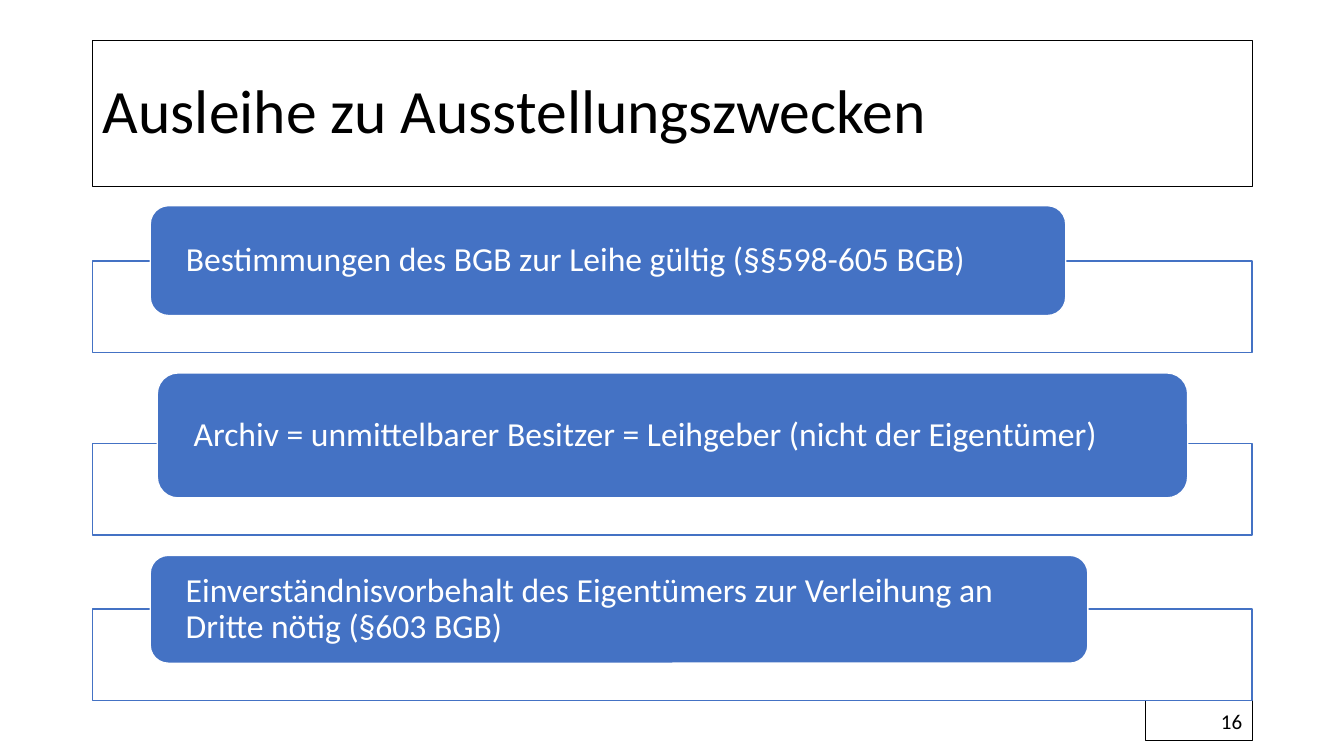
import pptx
import pptx.util
import pptx.dml.color
import pptx.enum.shapes
import pptx.enum.text
import pptx.oxml.ns
import lxml.etree

Inches = pptx.util.Inches
Shape = pptx.enum.shapes.MSO_SHAPE
Align = pptx.enum.text.PP_ALIGN
BLACK = pptx.dml.color.RGBColor(0x00, 0x00, 0x00)
WHITE = pptx.dml.color.RGBColor(0xFF, 0xFF, 0xFF)
BLUE = pptx.dml.color.RGBColor(0x44, 0x72, 0xC4)

LEFT, WIDTH = 0.92, 11.5
PANEL_HEIGHT, OVERLAP, GAP = 0.91, 0.54, 0.2
STATEMENTS = [
    ("Bestimmungen des BGB zur Leihe gültig (§§598-605 BGB)", 1.49, 9.08, 1.09),
    ("Archiv = unmittelbarer Besitzer = Leihgeber (nicht der Eigentümer)", 1.56, 10.22, 1.24),
    ("Einverständnisvorbehalt des Eigentümers zur Verleihung an Dritte nötig (§603 BGB)", 1.49, 9.3, 1.07),
]


def style_box(box, fill, line, line_width, opacity=100):
    box.shadow.inherit = False
    box.fill.solid()
    box.fill.fore_color.rgb = fill
    box.line.color.rgb = line
    box.line.width = pptx.util.Pt(line_width)
    if opacity < 100:
        color = box.fill._xPr.find(".//" + pptx.oxml.ns.qn("a:srgbClr"))
        alpha = lxml.etree.SubElement(color, pptx.oxml.ns.qn("a:alpha"))
        alpha.set("val", str(opacity * 1000))


def write_text(box, text, size, color, alignment, spacing=1.0):
    frame = box.text_frame
    frame.text = text
    frame.word_wrap = True
    frame.auto_size = pptx.enum.text.MSO_AUTO_SIZE.NONE
    frame.vertical_anchor = pptx.enum.text.MSO_ANCHOR.MIDDLE
    para = frame.paragraphs[0]
    para.alignment = alignment
    para.line_spacing = spacing
    para.font.name = "Calibri"
    para.font.size = pptx.util.Pt(size)
    para.font.color.rgb = color


deck = pptx.Presentation()
deck.slide_width = Inches(13.33)
deck.slide_height = Inches(7.5)
page = deck.slides.add_slide(deck.slide_layouts[5])

title = page.shapes.title
title.left, title.top = Inches(LEFT), Inches(0.4)
title.width, title.height = Inches(WIDTH), Inches(1.45)
style_box(title, WHITE, BLACK, 1, 75)
write_text(title, "Ausleihe zu Ausstellungszwecken", 44, BLACK, Align.LEFT, 0.9)

number = page.shapes.add_shape(
    Shape.RECTANGLE, Inches(LEFT + WIDTH - 1.06), Inches(6.95), Inches(1.06), Inches(0.4))
style_box(number, WHITE, BLACK, 0.75, 75)
write_text(number, "16", 15, BLACK, Align.RIGHT)

top = 2.04
for text, left, width, height in STATEMENTS:
    panel_top = top + height - OVERLAP
    panel = page.shapes.add_shape(
        Shape.RECTANGLE, Inches(LEFT), Inches(panel_top), Inches(WIDTH), Inches(PANEL_HEIGHT))
    style_box(panel, WHITE, BLUE, 1, 90)
    label = page.shapes.add_shape(
        Shape.ROUNDED_RECTANGLE, Inches(left), Inches(top), Inches(width), Inches(height))
    style_box(label, BLUE, WHITE, 1)
    write_text(label, text, 24, WHITE, Align.LEFT, 0.9)
    frame = label.text_frame
    frame.margin_left = frame.margin_right = Inches(0.3)
    frame.margin_top = frame.margin_bottom = 0
    top = panel_top + PANEL_HEIGHT + GAP

deck.save("out.pptx")
